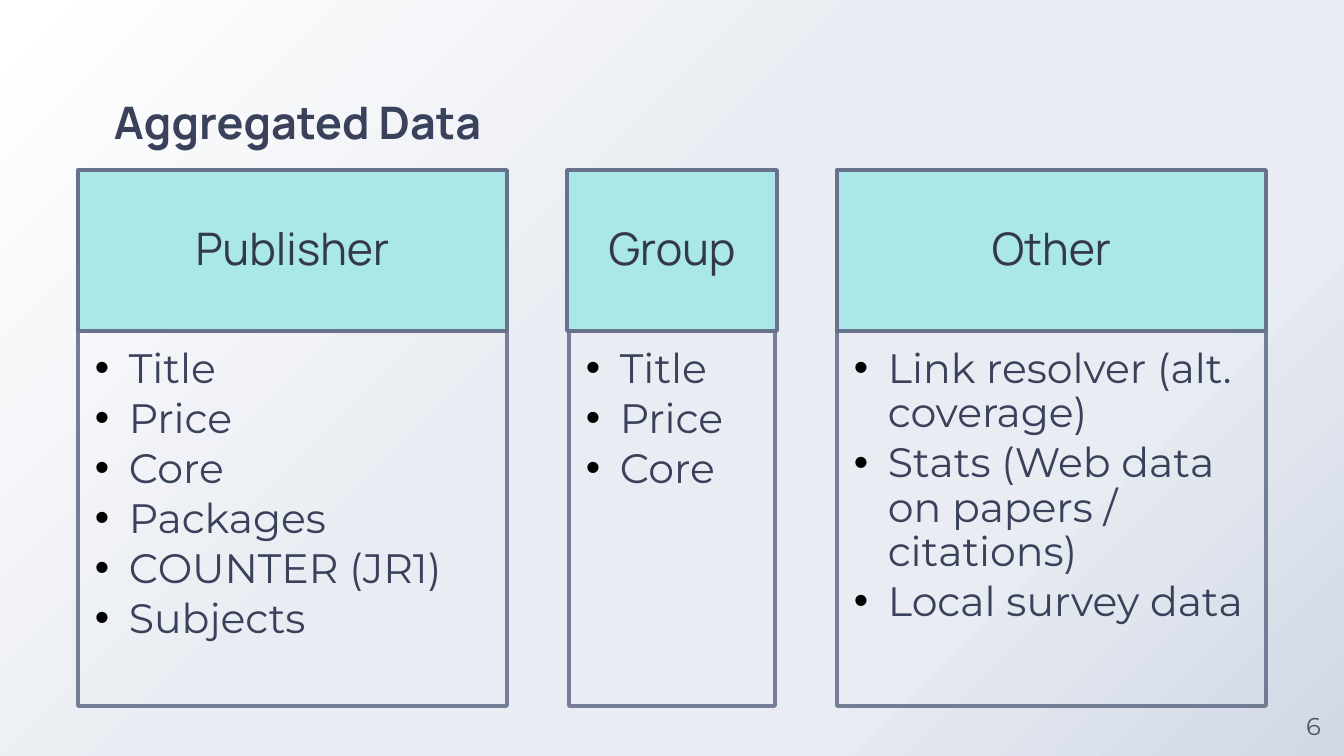
from copy import deepcopy

from lxml.etree import SubElement
from pptx import Presentation
from pptx.dml.color import RGBColor
from pptx.enum.shapes import MSO_SHAPE
from pptx.enum.text import MSO_ANCHOR, PP_ALIGN
from pptx.oxml.ns import qn
from pptx.util import Emu, Pt

EMU_PER_PIXEL = 914400 / 134.4
COLORS = {
    "title": "3A425B",
    "header_text": "343946",
    "number": "4E566A",
    "header": "AAE8E8",
    "border": "68728D",
    "bullet": "000000",
}
BACKGROUND_STOPS = [(0, "FFFFFF"), (0.44, "E9EDF3"), (0.72, "E9EDF3"), (1, "D0D8E5")]
HEADER_HEIGHT = 161
COLUMNS = [
    ((78, 170, 429, 536), 0, "Publisher",
     ["Title", "Price", "Core", "Packages", "COUNTER (JR1)", "Subjects"]),
    ((567, 170, 210, 536), 2, "Group", ["Title", "Price", "Core"]),
    ((837, 170, 429, 536), 0, "Other",
     ["Link resolver (alt. coverage)", "Stats (Web data on papers / citations)",
      "Local survey data"]),
]


def px(length):
    """Turn pixels into EMU."""
    return Emu(round(length * EMU_PER_PIXEL))


def rgb(name):
    """Look up a named colour."""
    return RGBColor.from_string(COLORS[name])


def add_bullet(paragraph):
    """Give a paragraph a hanging round bullet."""
    properties = paragraph._p.get_or_add_pPr()
    properties.set("marL", str(px(34)))
    properties.set("indent", str(-px(34)))
    color = SubElement(properties, qn("a:buClr"))
    SubElement(color, qn("a:srgbClr"), val=COLORS["bullet"])
    SubElement(properties, qn("a:buFont"), typeface="Arial")
    SubElement(properties, qn("a:buChar"), char="•")


def write_text(shape, *lines, size, font, color, bold=False, bullet=False,
               align=PP_ALIGN.LEFT, anchor=MSO_ANCHOR.MIDDLE,
               insets=(0, 0, 0, 0), line_spacing=1.0, space_after=0):
    """Fill a shape with formatted paragraphs."""
    frame = shape.text_frame
    frame.word_wrap = True
    frame.vertical_anchor = anchor
    (frame.margin_left, frame.margin_top,
     frame.margin_right, frame.margin_bottom) = map(px, insets)
    for index, line in enumerate(lines):
        paragraph = frame.add_paragraph() if index else frame.paragraphs[0]
        if bullet:
            paragraph.level = 1
            add_bullet(paragraph)
        paragraph.alignment = align
        paragraph.line_spacing = line_spacing
        paragraph.space_after = Pt(space_after)
        run = paragraph.add_run()
        run.text = line
        run.font.size = Pt(size)
        run.font.name = font
        run.font.bold = bold
        run.font.color.rgb = rgb(color)


def add_panel(slide, box, fill=None, opacity=100):
    """Add a bordered rectangle, filled or clear."""
    panel = slide.shapes.add_shape(MSO_SHAPE.RECTANGLE, *map(px, box))
    panel.shadow.inherit = False
    if fill:
        panel.fill.solid()
        panel.fill.fore_color.rgb = rgb(fill)
    else:
        panel.fill.background()
    panel.line.color.rgb = rgb("border")
    panel.line.width = Pt(2)
    if opacity < 100:
        color = panel.line._ln.find(".//" + qn("a:srgbClr"))
        SubElement(color, qn("a:alpha"), val=str(opacity * 1000))
    return panel


def paint_background(slide):
    """Paint the diagonal gradient behind the slide."""
    fill = slide.background.fill
    fill.gradient()
    fill.gradient_angle = 315
    stop_list = slide.element.find(".//" + qn("a:gsLst"))
    while len(stop_list) < len(BACKGROUND_STOPS):
        stop_list.append(deepcopy(stop_list[-1]))
    for stop, (position, color) in zip(fill.gradient_stops, BACKGROUND_STOPS):
        stop.position = position
        stop.color.rgb = RGBColor.from_string(color)


def add_label(slide, box, text, **text_format):
    """Place one line of text in a box."""
    label = slide.shapes.add_textbox(*map(px, box))
    write_text(label, text, **text_format)


def add_column(slide, box, body_inset, heading, items):
    """Place a headed list of data fields in a box."""
    left, top, width, height = box
    header = add_panel(slide, (left, top, width, HEADER_HEIGHT), fill="header")
    write_text(header, heading, size=24, font="Manrope", color="header_text",
               align=PP_ALIGN.CENTER, insets=(25, 15, 25, 15), line_spacing=0.9)
    body_box = (left + body_inset, top + HEADER_HEIGHT,
                width - 2 * body_inset, height - HEADER_HEIGHT)
    body = add_panel(slide, body_box, opacity=90)
    write_text(body, *items, size=22, font="Montserrat", color="title", bullet=True,
               anchor=MSO_ANCHOR.TOP, insets=(17, 17, 23, 25),
               line_spacing=0.9, space_after=3)


def main():
    """Build and save the presentation."""
    presentation = Presentation()
    presentation.slide_width, presentation.slide_height = px(1344), px(756)
    slide = presentation.slides.add_slide(presentation.slide_layouts[6])
    paint_background(slide)
    add_label(slide, (114, 59, 527, 126), "Aggregated Data",
              size=24, font="Manrope", color="title", bold=True)
    add_label(slide, (1283, 696, 61, 60), "6", size=13, font="Montserrat",
              color="number", align=PP_ALIGN.CENTER)
    for column in COLUMNS:
        add_column(slide, *column)
    presentation.save("out.pptx")


if __name__ == "__main__":
    main()
